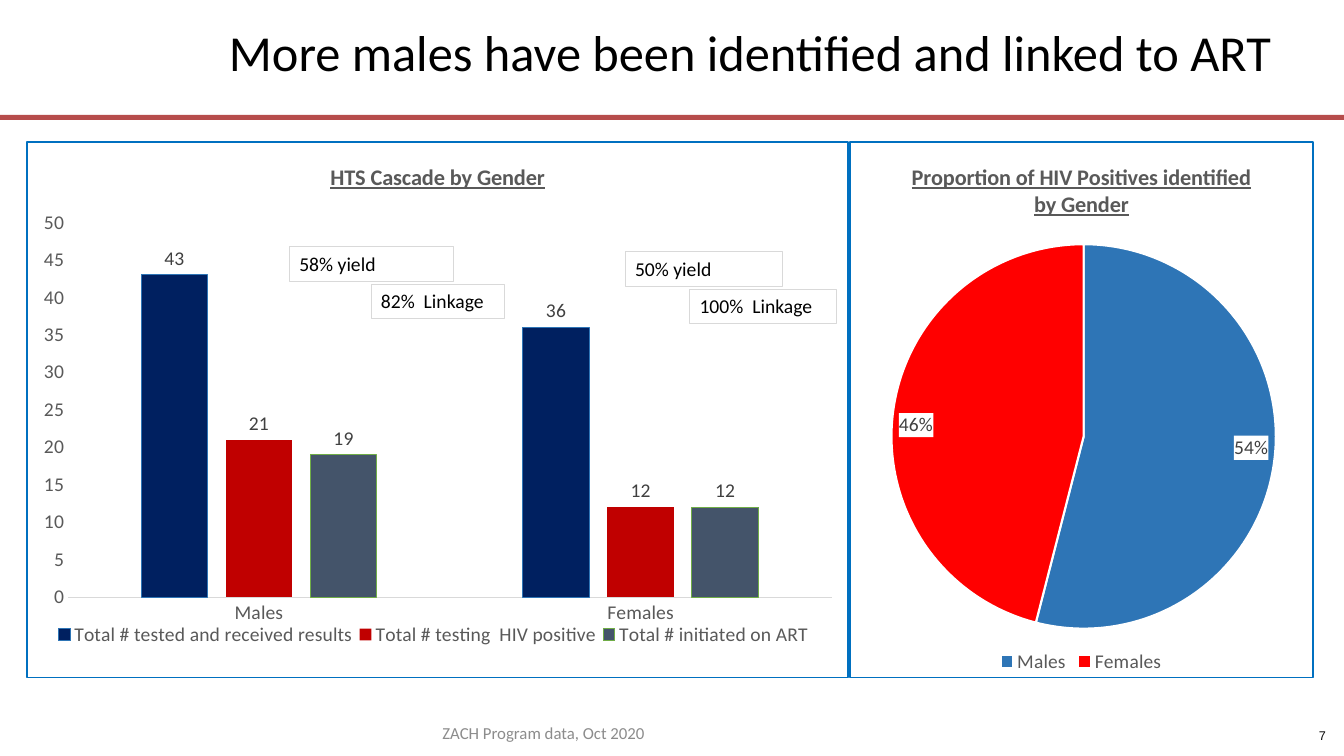
from dataclasses import dataclass
from typing import Any

from lxml.etree import SubElement
from pptx import Presentation
from pptx.chart.chart import Chart
from pptx.chart.data import CategoryChartData
from pptx.dml.color import RGBColor
from pptx.enum.chart import XL_CHART_TYPE, XL_LABEL_POSITION, XL_LEGEND_POSITION, XL_TICK_MARK
from pptx.enum.shapes import MSO_SHAPE
from pptx.enum.text import MSO_ANCHOR, PP_ALIGN
from pptx.oxml import parse_xml
from pptx.oxml.ns import nsdecls, qn
from pptx.slide import Slide
from pptx.util import Inches, Pt

BLACK = RGBColor(0, 0, 0)
WHITE = RGBColor(0xFF, 0xFF, 0xFF)
NUMBER_BLACK = RGBColor(0x06, 0x06, 0x06)
FOOTER_GRAY = RGBColor(0x8C, 0x8C, 0x8C)
AXIS_GRAY = RGBColor(0x59, 0x59, 0x59)
LABEL_GRAY = RGBColor(0x40, 0x40, 0x40)
LINE_GRAY = RGBColor(0xD9, 0xD9, 0xD9)
RULE_RED = RGBColor(0xB6, 0x4C, 0x4B)
BORDER_BLUE = RGBColor(0x00, 0x70, 0xC0)
NAVY = RGBColor(0x00, 0x20, 0x60)
BLUE = RGBColor(0x2E, 0x75, 0xB6)
DARK_RED = RGBColor(0xC0, 0, 0)
RED = RGBColor(0xFF, 0, 0)
SLATE = RGBColor(0x44, 0x54, 0x6A)
GREEN = RGBColor(0x70, 0xAD, 0x47)

GENDERS = ("Males", "Females")
CHART_TOP, CHART_HEIGHT = 1.4, 5.33
Box = tuple[float, float, float, float]


@dataclass(frozen=True)
class CascadeStep:
    name: str
    counts: tuple[int, int]
    fill: RGBColor
    outline: RGBColor | None = None


@dataclass(frozen=True)
class Callout:
    text: str
    left: float
    top: float
    width: float


CASCADE = (
    CascadeStep("Total # tested and received results", (43, 36), NAVY, BLUE),
    CascadeStep("Total # testing  HIV positive", (21, 12), DARK_RED),
    CascadeStep("Total # initiated on ART", (19, 12), SLATE, GREEN),
)
CALLOUTS = (
    Callout("58% yield", 2.87, 2.45, 1.63),
    Callout("82%  Linkage", 3.68, 2.82, 1.32),
    Callout("50% yield", 6.2, 2.5, 1.56),
    Callout("100%  Linkage", 6.84, 2.87, 1.46),
)


def apply(target: Any, **values: Any) -> None:
    for attribute, value in values.items():
        setattr(target, attribute, value)


def style_font(font: Any, size: float, color: RGBColor, name: str = "Calibri", **values: Any) -> None:
    apply(font, name=name, size=Pt(size), **values)
    font.color.rgb = color


def style_line(line: Any, color: RGBColor, width: float) -> None:
    line.color.rgb = color
    line.width = Pt(width)


def write(shape: Any, text: str, size: float, color: RGBColor, name: str = "Calibri",
          align: PP_ALIGN = PP_ALIGN.LEFT, anchor: MSO_ANCHOR = MSO_ANCHOR.MIDDLE,
          spacing: float = 1.0) -> None:
    apply(shape.text_frame, text=text, word_wrap=True, vertical_anchor=anchor)
    paragraph = shape.text_frame.paragraphs[0]
    apply(paragraph, alignment=align, line_spacing=spacing)
    style_font(paragraph.runs[0].font, size, color, name)


def place(box: Box) -> list[Inches]:
    return [Inches(length) for length in box]


def set_layout(parent: Any, box: Box, position: int, inner: bool = False) -> None:
    """Fix a chart part at fractions of the chart area."""
    for old in parent.findall(qn("c:layout")):
        parent.remove(old)
    layout = parse_xml(f"<c:layout {nsdecls('c')}><c:manualLayout/></c:layout>")
    settings = {"layoutTarget": "inner"} if inner else {}
    settings |= {"xMode": "edge", "yMode": "edge"}
    settings |= dict(zip("xywh", map(str, box)))
    for tag, value in settings.items():
        SubElement(layout[0], qn(f"c:{tag}")).set("val", value)
    parent.insert(position, layout)


def add_framed_chart(slide: Slide, kind: XL_CHART_TYPE, data: CategoryChartData, left: float,
                     width: float, title: str, plot_box: Box) -> Chart:
    """Add a chart with the border, title, legend and fonts that both charts share."""
    frame = slide.shapes.add_chart(
        kind, *place((left, CHART_TOP, width, CHART_HEIGHT)), data)
    chart = frame.chart
    style_font(chart.font, 14, BLACK)
    apply(chart, has_title=True, has_legend=True)
    chart.chart_title.text_frame.text = title
    heading = chart.chart_title.text_frame.paragraphs[0].runs[0]
    style_font(heading.font, 16, AXIS_GRAY, bold=True, underline=True)
    apply(chart.legend, position=XL_LEGEND_POSITION.BOTTOM, include_in_layout=False)
    style_font(chart.legend.font, 14, AXIS_GRAY)

    space = chart.element
    body = space.find(qn("c:chart"))
    set_layout(body.find(qn("c:plotArea")), plot_box, 0, inner=True)
    if space.find(qn("c:roundedCorners")) is None:
        body.addprevious(parse_xml(f'<c:roundedCorners {nsdecls("c")} val="0"/>'))
    body.addnext(parse_xml(
        f'<c:spPr {nsdecls("c", "a")}><a:solidFill><a:srgbClr val="{WHITE}"/></a:solidFill>'
        f'<a:ln w="{Pt(1.25)}"><a:solidFill><a:srgbClr val="{BORDER_BLUE}"/></a:solidFill></a:ln>'
        "</c:spPr>"))
    return chart


def add_cascade_chart(slide: Slide) -> None:
    data = CategoryChartData()
    data.categories = GENDERS
    for step in CASCADE:
        data.add_series(step.name, step.counts)
    chart = add_framed_chart(slide, XL_CHART_TYPE.COLUMN_CLUSTERED, data, 0.26, 8.16,
                             "HTS Cascade by Gender", (0.05, 0.15, 0.93, 0.7))
    set_layout(chart.legend._element, (0.03, 0.89, 0.93, 0.06), 1)
    plot = chart.plots[0]
    apply(plot, gap_width=219, overlap=-27, vary_by_categories=False)
    for step, series in zip(CASCADE, plot.series):
        series.format.fill.solid()
        series.format.fill.fore_color.rgb = step.fill
        if step.outline:
            style_line(series.format.line, step.outline, 0.75)
        else:
            series.format.line.fill.background()
        labels = series.data_labels
        apply(labels, show_value=True, position=XL_LABEL_POSITION.OUTSIDE_END)
        style_font(labels.font, 14, LABEL_GRAY)
    for axis in (chart.category_axis, chart.value_axis):
        apply(axis, major_tick_mark=XL_TICK_MARK.NONE, minor_tick_mark=XL_TICK_MARK.NONE,
              has_major_gridlines=False)
        style_font(axis.tick_labels.font, 14, AXIS_GRAY)
    apply(chart.value_axis, minimum_scale=0, maximum_scale=50, major_unit=5)
    style_line(chart.category_axis.format.line, LINE_GRAY, 0.75)
    chart.value_axis.format.line.fill.background()


def add_proportion_chart(slide: Slide) -> None:
    data = CategoryChartData()
    data.categories = GENDERS
    data.add_series("Series 1", (54, 46))
    chart = add_framed_chart(slide, XL_CHART_TYPE.PIE, data, 8.42, 4.61,
                             "Proportion of HIV Positives identified by Gender",
                             (0.09, 0.19, 0.83, 0.72))
    plot = chart.plots[0]
    plot.vary_by_categories = True
    series = plot.series[0]
    for index, color in enumerate((BLUE, RED)):
        wedge = series.points[index].format
        wedge.fill.solid()
        wedge.fill.fore_color.rgb = color
        style_line(wedge.line, WHITE, 1.5)
    labels = series.data_labels
    apply(labels, show_percentage=True, show_value=False, number_format="0%",
          number_format_is_linked=False, position=XL_LABEL_POSITION.INSIDE_END)
    style_font(labels.font, 14, LABEL_GRAY)
    labels._element.find(qn("c:txPr")).addprevious(parse_xml(
        f'<c:spPr {nsdecls("c", "a")}><a:solidFill><a:srgbClr val="{WHITE}"/></a:solidFill></c:spPr>'))


def add_rectangle(slide: Slide, box: Box) -> Any:
    rectangle = slide.shapes.add_shape(MSO_SHAPE.RECTANGLE, *place(box))
    rectangle.shadow.inherit = False
    return rectangle


def main() -> None:
    deck = Presentation()
    apply(deck, slide_width=Inches(13.33), slide_height=Inches(7.5))
    slide = deck.slides.add_slide(deck.slide_layouts[5])

    rule = add_rectangle(slide, (0, 1.14, 13.33, 0.05))
    rule.fill.solid()
    rule.fill.fore_color.rgb = RULE_RED
    rule.line.fill.background()

    headline = slide.shapes.title
    apply(headline, **dict(zip(("left", "top", "width", "height"), place((2.17, 0.2, 10.85, 0.69)))))
    write(headline, "More males have been identified and linked to ART", 36, BLACK, spacing=0.9)
    data_source = slide.shapes.add_textbox(*place((4.29, 7.08, 4.76, 0.4)))
    write(data_source, "ZACH Program data, Oct 2020", 12, FOOTER_GRAY, spacing=0.9)
    page_number = slide.shapes.add_textbox(*place((12.61, 7.1, 0.64, 0.4)))
    write(page_number, "7", 9, NUMBER_BLACK, "Arial", PP_ALIGN.RIGHT)

    add_cascade_chart(slide)
    add_proportion_chart(slide)
    for callout in CALLOUTS:
        frame = add_rectangle(slide, (callout.left, callout.top, callout.width, 0.34))
        frame.fill.background()
        style_line(frame.line, LINE_GRAY, 0.75)
        write(frame, callout.text, 14, BLACK, anchor=MSO_ANCHOR.TOP)
    deck.save("out.pptx")


if __name__ == "__main__":
    main()
